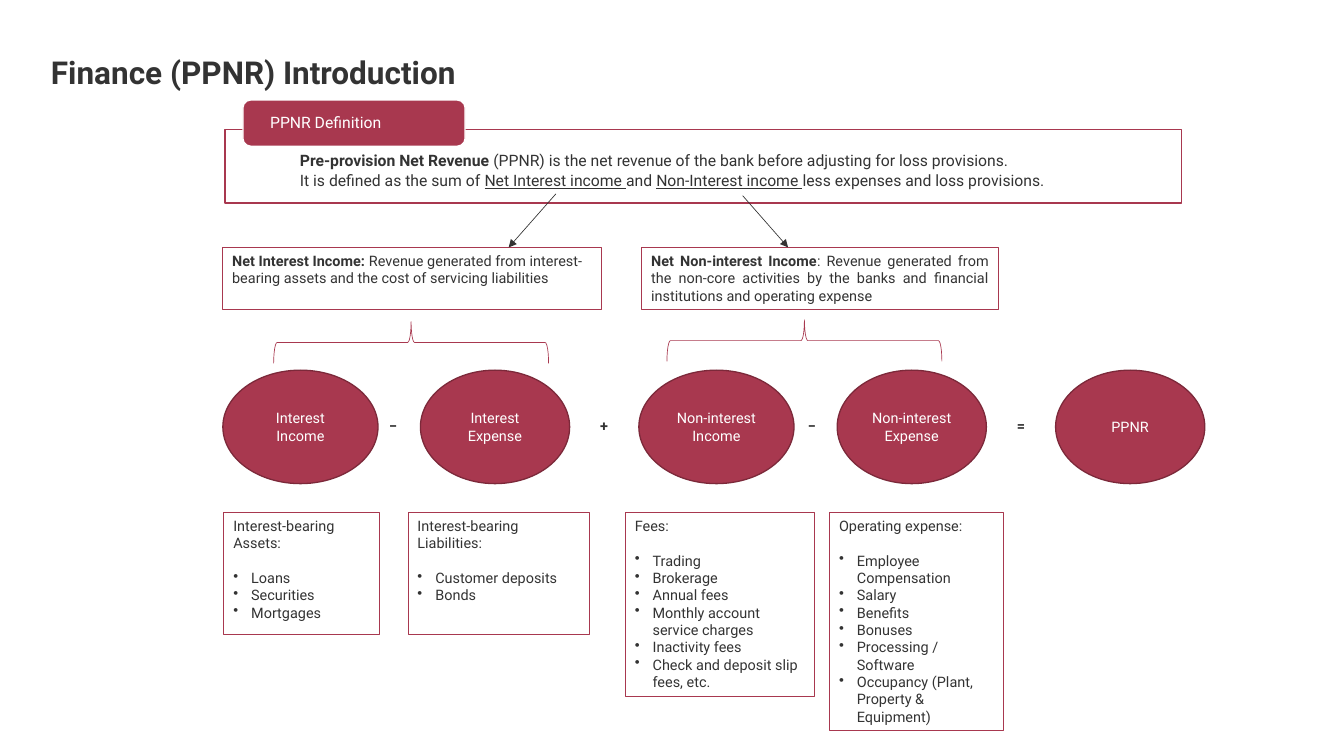
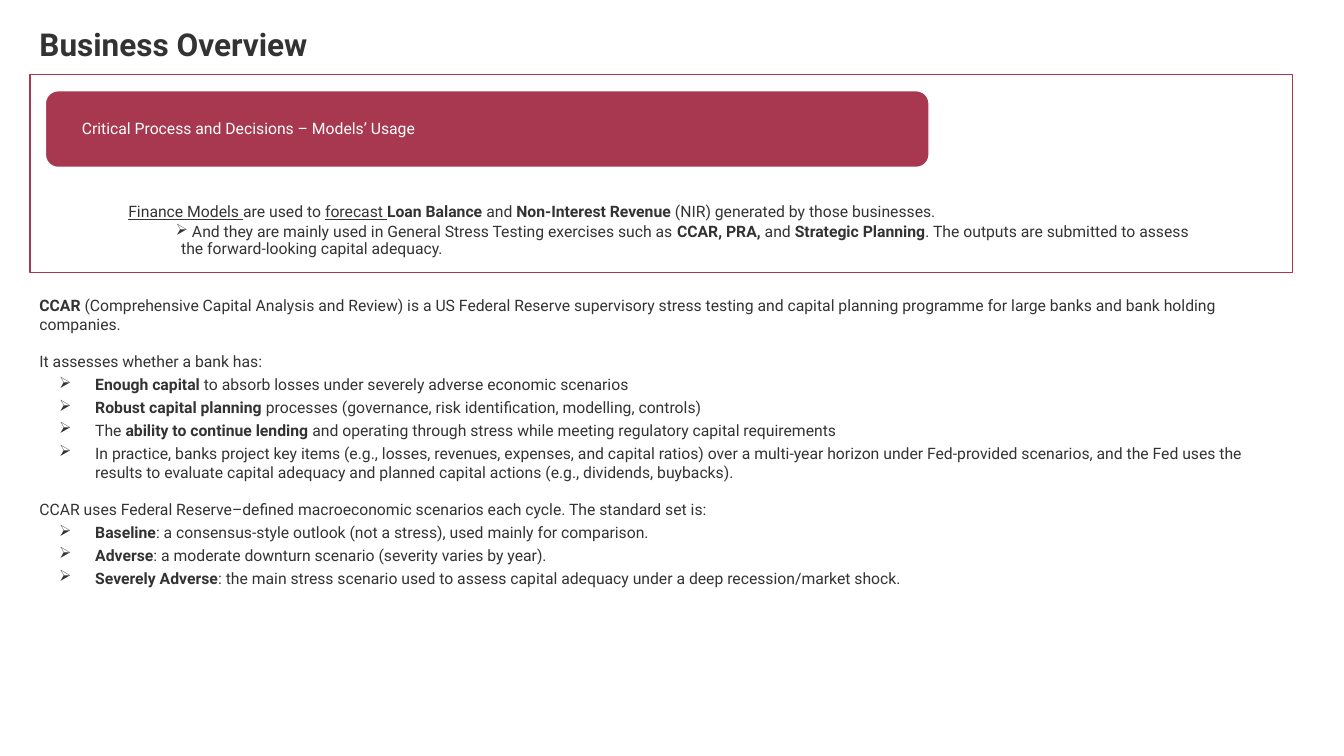
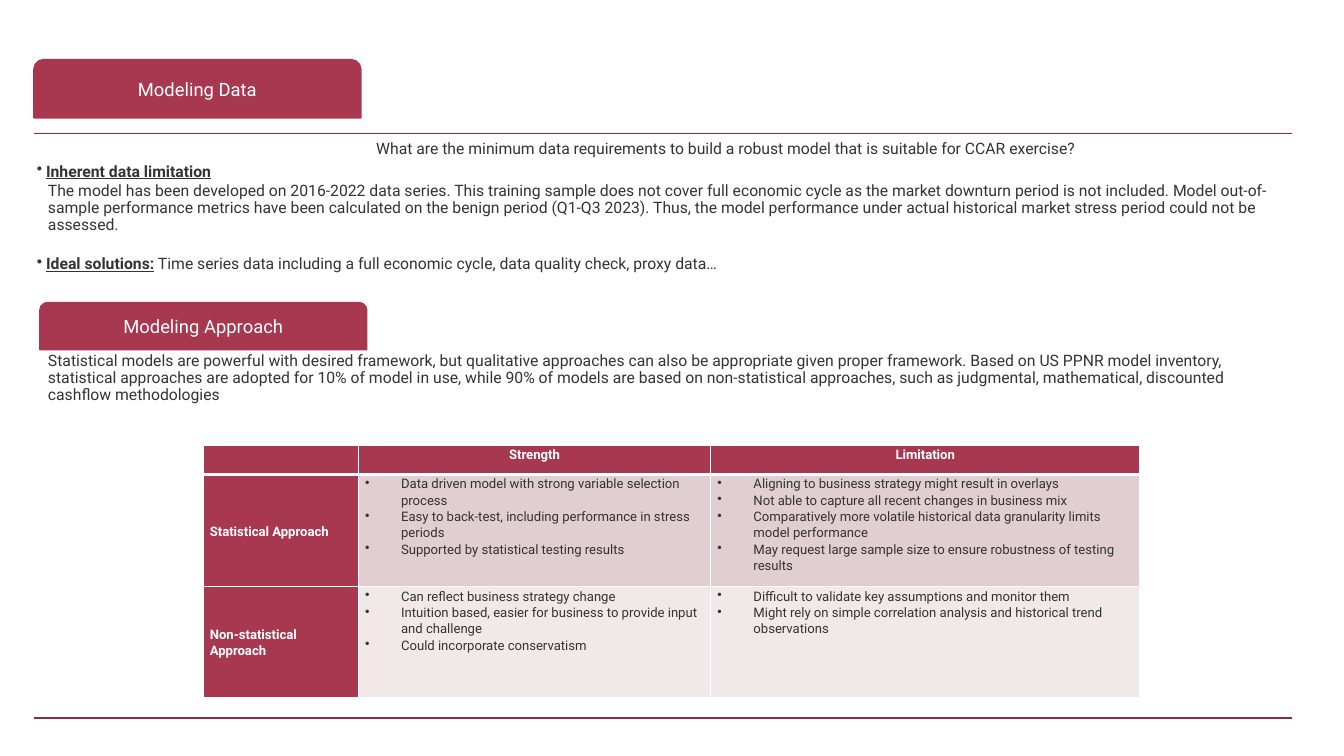
from dataclasses import dataclass

from lxml import etree
from pptx import Presentation
from pptx.dml.color import RGBColor
from pptx.enum.shapes import MSO_CONNECTOR, MSO_SHAPE
from pptx.enum.text import MSO_ANCHOR, PP_ALIGN
from pptx.oxml.ns import qn
from pptx.util import Cm, Pt

RECT = MSO_SHAPE.RECTANGLE
ROUNDED = MSO_SHAPE.ROUNDED_RECTANGLE
ROUND_TOP = MSO_SHAPE.ROUND_2_SAME_RECTANGLE
ELLIPSE = MSO_SHAPE.OVAL
BRACE = MSO_SHAPE.RIGHT_BRACE
STRAIGHT = MSO_CONNECTOR.STRAIGHT
TOP, MIDDLE, BOTTOM = MSO_ANCHOR.TOP, MSO_ANCHOR.MIDDLE, MSO_ANCHOR.BOTTOM
LEFT, CENTER, JUSTIFY = PP_ALIGN.LEFT, PP_ALIGN.CENTER, PP_ALIGN.JUSTIFY


@dataclass(frozen=True)
class Theme:
    font: str = "Roboto"
    ink: str = "333333"
    white: str = "FFFFFF"
    accent: str = "A8384F"
    accent_dark: str = "7C293A"
    rule: str = "872D3F"
    rows: tuple = ("E1CED0", "F1E8E9")
    title: int = 24
    tab: int = 14
    body: int = 12
    diagram: int = 11
    table: int = 10
    blank_line: float = 14.2  # gap of one body line


THEME = Theme()
INSETS = (0.25, 0.13, 0.25, 0.13)
TAB_INSETS = (0.08, 0.08, 0.08, 0.08)
CELL_INSETS = (0.18, 0.03, 0.18, 0)


def rgb(color):
    return RGBColor.from_string(color)


# Text: a paragraph is a string or a list of runs; a run is a string
# or a (text, style) pair, where style holds "b" and/or "u".
def write(frame, runs, *, size=THEME.body, color=THEME.ink, bold=False,
          align=LEFT, spacing=None, before=0, after=0, bullet=None,
          left=0, hang=0):
    paragraph = frame.paragraphs[0]
    if paragraph.runs:
        paragraph = frame.add_paragraph()
    properties = paragraph._p.get_or_add_pPr()
    properties.set("marL", str(Cm(left)))
    properties.set("indent", str(-Cm(hang)))
    if bullet:
        etree.SubElement(properties, qn("a:buChar"), char=bullet)
    paragraph.alignment = align
    paragraph.space_before, paragraph.space_after = Pt(before), Pt(after)
    if spacing:
        paragraph.line_spacing = spacing
    for part in [runs] if isinstance(runs, str) else runs:
        text, style = (part, "") if isinstance(part, str) else part
        run = paragraph.add_run()
        run.text = text
        run.font.name, run.font.size = THEME.font, Pt(size)
        run.font.bold = bold or "b" in style
        run.font.underline = "u" in style
        run.font.color.rgb = rgb(color)
    if not runs:
        etree.SubElement(paragraph._p, qn("a:endParaRPr"), sz=str(size * 100))


def set_frame(frame, insets=INSETS, anchor=TOP):
    frame.word_wrap = True
    frame.vertical_anchor = anchor
    (frame.margin_left, frame.margin_top,
     frame.margin_right, frame.margin_bottom) = map(Cm, insets)
    return frame


def text_area(slide, box, **layout):
    return set_frame(slide.shapes.add_textbox(*map(Cm, box)).text_frame, **layout)


def add_block(slide, kind, box, *, fill=None, line=THEME.accent, width=1, **layout):
    block = slide.shapes.add_shape(kind, *map(Cm, box))
    block.shadow.inherit = False
    if fill:
        block.fill.solid()
        block.fill.fore_color.rgb = rgb(fill)
    else:
        block.fill.background()
    block.line.color.rgb = rgb(line)
    block.line.width = Pt(width)
    set_frame(block.text_frame, **layout)
    return block


def add_line(slide, start, end, color, width, arrow=False):
    line = slide.shapes.add_connector(STRAIGHT, *map(Cm, (*start, *end)))
    line.line.color.rgb = rgb(color)
    line.line.width = Pt(width)
    if arrow:
        etree.SubElement(line.line._get_or_add_ln(), qn("a:tailEnd"), type="triangle")
    etree.SubElement(line._element.spPr, qn("a:effectLst"))


# Shared slide parts
def add_title(slide, left, top, text):
    write(text_area(slide, (left, top, 25.7, 0.66)), text,
          size=THEME.title, bold=True, spacing=0.8)


def add_panel(slide, box, insets, tab_box, tab_inset, heading):
    panel = add_block(slide, RECT, box, fill=THEME.white, insets=insets)
    tab = add_block(slide, ROUNDED, tab_box, fill=THEME.accent, line=THEME.white,
                    insets=(tab_inset, 0, tab_inset, 0), anchor=MIDDLE)
    write(tab.text_frame, heading, color=THEME.white, spacing=0.9)
    return panel.text_frame


def add_section_tab(slide, left, top, height, heading):
    tab = add_block(slide, ROUND_TOP, (left, top, 8.79, height), fill=THEME.accent,
                    insets=TAB_INSETS, anchor=MIDDLE)
    write(tab.text_frame, heading, size=THEME.tab, color=THEME.white,
          align=CENTER, spacing=0.9)


def add_term(slide, left, width, text):
    term = add_block(slide, ELLIPSE, (left, 9.95, width, 3.05), fill=THEME.accent,
                     line=THEME.accent_dark, anchor=MIDDLE)
    write(term.text_frame, text, size=THEME.diagram, color=THEME.white, align=CENTER)


def add_component_list(slide, left, width, height, heading, items):
    box = add_block(slide, RECT, (left, 13.77, width, height), width=0.75)
    write(box.text_frame, heading, size=THEME.diagram)
    for index, item in enumerate(items):
        write(box.text_frame, item, size=THEME.diagram, bullet="•",
              left=0.48, hang=0.48, before=0 if index else 13.2)


def style_cell(cell, fill, top_width, bottom_width):
    properties = cell._tc.get_or_add_tcPr()
    for side, width in zip("LRTB", (1, 1, top_width, bottom_width)):
        border = etree.SubElement(properties, qn(f"a:ln{side}"), w=str(Pt(width)))
        solid = etree.SubElement(border, qn("a:solidFill"))
        etree.SubElement(solid, qn("a:srgbClr"), val=THEME.white)
    cell.fill.solid()
    cell.fill.fore_color.rgb = rgb(fill)
    (cell.margin_left, cell.margin_top,
     cell.margin_right, cell.margin_bottom) = map(Cm, CELL_INSETS)


def add_comparison(slide, left, top, widths, heights, rows):
    table = slide.shapes.add_table(
        len(rows), len(widths), Cm(left), Cm(top),
        Cm(sum(widths)), Cm(sum(heights))).table
    for column, width in zip(table.columns, widths):
        column.width = Cm(width)
    for r, (row, height) in enumerate(zip(rows, heights)):
        table.rows[r].height = Cm(height)
        for c, content in enumerate(row):
            cell = table.cell(r, c)
            is_heading = r == 0 or c == 0
            style_cell(cell, THEME.accent if is_heading else THEME.rows[r - 1],
                       3 if r == 1 else 1, 3 if r == 0 else 1)
            if is_heading:
                cell.vertical_anchor = MIDDLE if r else TOP
                write(cell.text_frame, content, size=THEME.table, color=THEME.white,
                      bold=True, align=LEFT if r else CENTER, spacing=1.07)
                continue
            for item in content:
                write(cell.text_frame, item, size=THEME.table, spacing=1.07,
                      bullet="•", left=0.97, hang=0.97)


# Slide 1
def build_introduction(slide):
    add_title(slide, 1.12, 1.5, "Finance (PPNR) Introduction")

    # Formula
    for left, width, term in (
            (5.99, 4.17, "Interest Income"), (11.3, 4.01, "Interest Expense"),
            (17.17, 4.17, "Non-interest Income"),
            (22.5, 4.01, "Non-interest Expense"), (28.37, 4.01, "PPNR")):
        add_term(slide, left, width, term)
    for left, sign in ((10.21, "‒"), (15.88, "+"), (21.46, "‒"), (27.08, "=")):
        write(text_area(slide, (left, 11.08, 1.22, 0.66)), sign,
              size=THEME.diagram, bold=True)

    # Components under the formula
    add_component_list(slide, 6.02, 4.17, 3.28, "Interest-bearing Assets:",
                       ("Loans", "Securities", "Mortgages"))
    add_component_list(slide, 10.97, 4.88, 3.28, "Interest-bearing Liabilities:",
                       ("Customer deposits", "Bonds"))
    add_component_list(slide, 16.81, 5.08, 4.95, "Fees:",
                       ("Trading", "Brokerage", "Annual fees",
                        "Monthly account service charges", "Inactivity fees",
                        "Check and deposit slip fees, etc."))
    add_component_list(slide, 22.3, 4.67, 5.87, "Operating expense:",
                       ("Employee Compensation", "Salary", "Benefits", "Bonuses",
                        "Processing / Software",
                        "Occupancy (Plant, Property & Equipment)"))

    # The two kinds of income, each with its brace
    for left, width, brace_left, brace_top, align, definition in (
            (5.99, 10.19, 10.49, 5.51, LEFT,
             [("Net Interest Income: ", "b"),
              "Revenue generated from interest-bearing assets and the cost of "
              "servicing liabilities"]),
            (17.25, 9.58, 21.06, 5.46, JUSTIFY,
             [("Net Non-interest Income", "b"),
              ": Revenue generated from the non-core activities by the banks and "
              "financial institutions and operating expense"])):
        income = add_block(slide, RECT, (left, 6.65, width, 1.68), width=0.75)
        write(income.text_frame, definition, size=THEME.diagram, align=align)
        brace = add_block(slide, BRACE, (brace_left, brace_top, 1.12, 7.39), width=0.5)
        brace.rotation = 270

    # Definition
    definition = add_panel(slide, (6.05, 3.48, 25.7, 1.98), (2.01, 0.64, 2.01, 0.23),
                           (6.53, 2.69, 5.97, 1.24), 0.67, "PPNR Definition")
    for sentence in (
            [("Pre-provision Net Revenue ", "b"),
             "(PPNR) is the net revenue of the bank before adjusting for loss "
             "provisions."],
            ["It is defined as the sum of ", ("Net Interest income ", "u"), "and ",
             ("Non-Interest income ", "u"), "less expenses and loss provisions."]):
        write(definition, sentence, spacing=0.9, after=2)
    add_line(slide, (14.94, 5.21), (13.67, 6.65), THEME.ink, 0.5, arrow=True)
    add_line(slide, (19.96, 5.26), (21.18, 6.65), THEME.ink, 0.5, arrow=True)


# Slide 2
def build_overview(slide):
    add_title(slide, 0.81, 0.74, "Business Overview")

    # Use of the models
    usage = add_panel(slide, (0.81, 2.01, 33.93, 5.31), (2.64, 3.48, 2.64, 0.23),
                      (1.22, 2.44, 23.75, 2.06), 0.88,
                      "Critical Process and Decisions – Models’ Usage")
    write(usage, [("Finance Models ", "u"), "are used to ", ("forecast ", "u"),
                  ("Loan Balance ", "b"), "and ", ("Non-Interest Revenue ", "b"),
                  "(NIR) generated by those businesses."], spacing=0.9, after=2)
    write(usage, [" And they are mainly used in General Stress Testing exercises such as ",
                  ("CCAR, PRA, ", "b"), "and ", ("Strategic Planning", "b"),
                  ". The outputs are submitted to assess the forward-looking capital "
                  "adequacy."],
          spacing=0.9, bullet="➢", left=1.42, hang=0.15)

    # CCAR
    ccar = text_area(slide, (0.81, 7.82, 33.93, 8.69))
    write(ccar, [("CCAR ", "b"),
                 "(Comprehensive Capital Analysis and Review) is a US Federal Reserve "
                 "supervisory stress testing and capital planning programme for large "
                 "banks and bank holding companies."])
    for lead, points in (
            ("It assesses whether a bank has:",
             ([("Enough capital ", "b"),
               "to absorb losses under severely adverse economic scenarios"],
              [("Robust capital planning ", "b"),
               "processes (governance, risk identification, modelling, controls)"],
              ["The ", ("ability to continue lending ", "b"),
               "and operating through stress while meeting regulatory capital "
               "requirements"],
              "In practice, banks project key items (e.g., losses, revenues, expenses, "
              "and capital ratios) over a multi-year horizon under Fed-provided "
              "scenarios, and the Fed uses the results to evaluate capital adequacy and "
              "planned capital actions (e.g., dividends, buybacks).")),
            ("CCAR uses Federal Reserve–defined macroeconomic scenarios each cycle. "
             "The standard set is:",
             ([("Baseline", "b"),
               ": a consensus-style outlook (not a stress), used mainly for comparison."],
              [("Adverse", "b"),
               ": a moderate downturn scenario (severity varies by year)."],
              [("Severely Adverse", "b"),
               ": the main stress scenario used to assess capital adequacy under a deep "
               "recession/market shock."]))):
        write(ccar, lead, before=THEME.blank_line)
        for point in points:
            write(ccar, point, before=3, bullet="➢", left=1.5, hang=0.97)


# Slide 3
def build_modeling(slide):
    for top in (19.3, 3.58):
        add_line(slide, (0.91, top), (34.72, top), THEME.rule, 1)

    # Data and approach
    write(text_area(slide, (10.03, 0.81, 24.28, 3.51), insets=TAB_INSETS, anchor=BOTTOM),
          "What are the minimum data requirements to build a robust model that is "
          "suitable for CCAR exercise?", spacing=0.9)
    add_section_tab(slide, 0.91, 1.6, 1.57, "Modeling Data")
    notes = text_area(slide, (0.91, 4.32, 33.81, 11.25), insets=TAB_INSETS)
    point = dict(spacing=0.9, after=2, bullet="•", left=0.25, hang=0.25)
    detail = dict(spacing=0.9, after=2, left=0.3)
    write(notes, [("Inherent data limitation", "bu")], **point)
    write(notes, "The model has been developed on 2016-2022 data series. This training "
                 "sample does not cover full economic cycle as the market downturn period "
                 "is not included. Model out-of-sample performance metrics have been "
                 "calculated on the benign period (Q1-Q3 2023). Thus, the model "
                 "performance under actual historical market stress period could not be "
                 "assessed.", **detail)
    write(notes, [("Ideal solutions:", "bu"),
                  " Time series data including a full economic cycle, data quality "
                  "check, proxy data…"], before=14.7, **point)
    write(notes, "Statistical models are powerful with desired framework, but qualitative "
                 "approaches can also be appropriate given proper framework. Based on US "
                 "PPNR model inventory, statistical approaches are adopted for 10% of "
                 "model in use, while 90% of models are based on non-statistical "
                 "approaches, such as judgmental, mathematical, discounted cashflow "
                 "methodologies", before=4 * 14.7, **detail)
    add_section_tab(slide, 1.07, 8.13, 1.27, "Modeling Approach")

    # Comparison of the approaches
    add_comparison(slide, 5.46, 11.96, (4.17, 9.47, 11.53), (0.41, 3.02, 2.97), (
        ("", "Strength", "Limitation"),
        ("Statistical Approach",
         ("Data driven model with strong variable selection process",
          "Easy to back-test, including performance in stress periods",
          "Supported by statistical testing results"),
         ("Aligning to business strategy might result in overlays",
          "Not able to capture all recent changes in business mix",
          "Comparatively more volatile historical data granularity limits model "
          "performance",
          "May request large sample size to ensure robustness of testing results")),
        ("Non-statistical Approach",
         ("Can reflect business strategy change",
          "Intuition based, easier for business to provide input and challenge",
          "Could incorporate conservatism"),
         ("Difficult to validate key assumptions and monitor them",
          "Might rely on simple correlation analysis and historical trend "
          "observations"))))


def main():
    deck = Presentation()
    deck.slide_width, deck.slide_height = Cm(36.12), Cm(20.32)
    blank = deck.slide_layouts[6]
    for build in (build_introduction, build_overview, build_modeling):
        build(deck.slides.add_slide(blank))
    deck.save("out.pptx")


if __name__ == "__main__":
    main()
